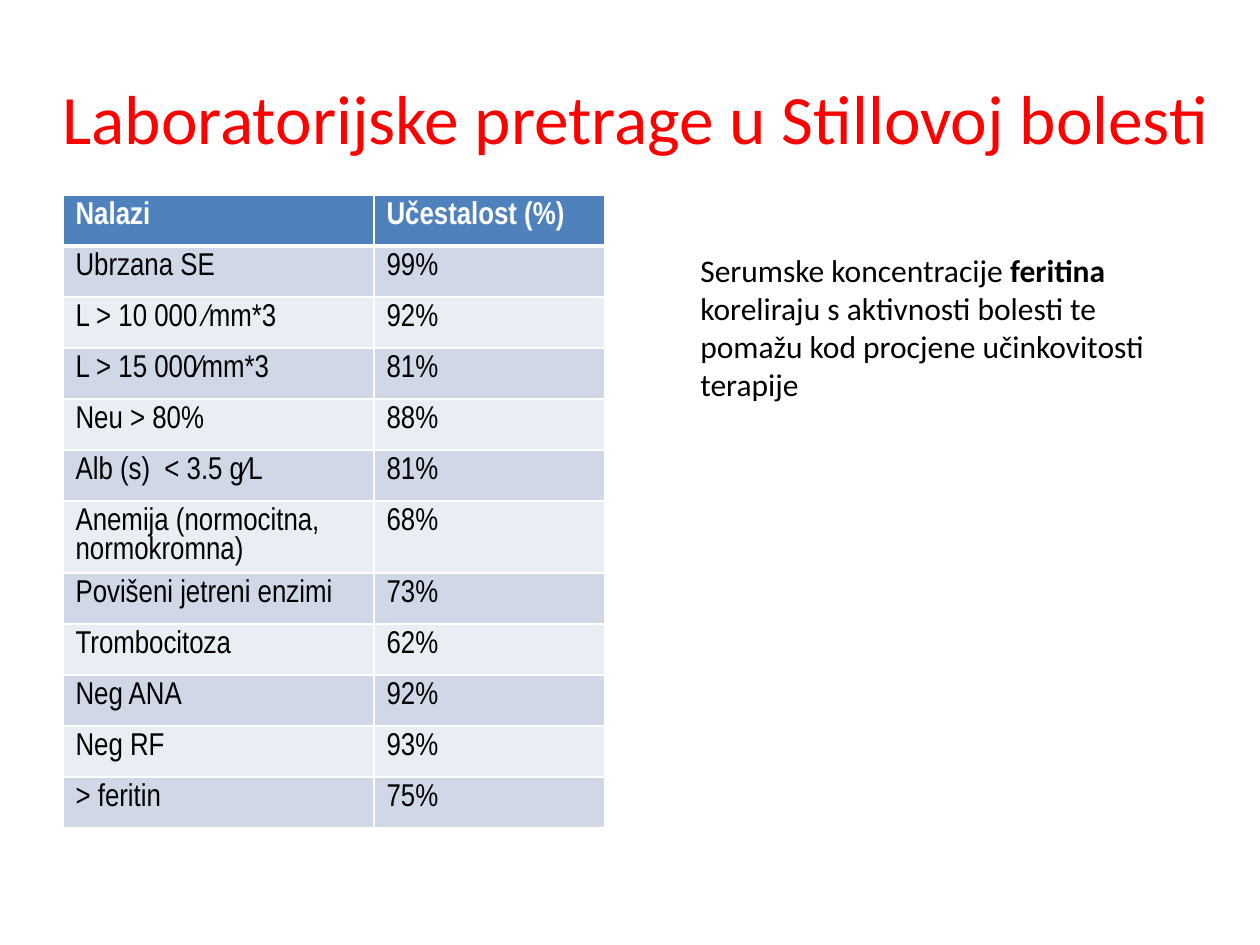
from dataclasses import dataclass

from lxml.etree import SubElement
from pptx import Presentation
from pptx.dml.color import RGBColor
from pptx.enum.text import MSO_ANCHOR, MSO_AUTO_SIZE, PP_ALIGN
from pptx.oxml.ns import qn
from pptx.util import Emu, Pt

PIXELS_PER_INCH = 126
EMU_PER_PIXEL = 914400 / PIXELS_PER_INCH


@dataclass(frozen=True)
class Theme:
    title_font: str = "Calibri"
    table_font: str = "Arial Narrow"
    title_size: float = 39.6
    body_size: float = 18
    title: str = "FF0000"
    text: str = "000000"
    white: str = "FFFFFF"
    header: str = "4F81BD"
    bands: tuple = ("D0D8E8", "E9EDF4")
    border: int = 1
    header_border: int = 3


THEME = Theme()

FINDINGS = [
    ("Nalazi", "Učestalost (%)"),
    ("Ubrzana SE", "99%"),
    ("L > 10 000 ⁄mm*3", "92%"),
    ("L > 15 000⁄mm*3", "81%"),
    ("Neu > 80%", "88%"),
    ("Alb (s)  < 3.5 g⁄L", "81%"),
    ("Anemija (normocitna, normokromna)", "68%"),
    ("Povišeni jetreni enzimi", "73%"),
    ("Trombocitoza", "62%"),
    ("Neg ANA", "92%"),
    ("Neg RF", "93%"),
    ("> feritin", "75%"),
]

FERRITIN_NOTE = [
    ("Serumske koncentracije ", False),
    ("feritina", True),
    (" koreliraju s aktivnosti bolesti te pomažu kod procjene učinkovitosti terapije", False),
]


def px(length):
    return Emu(round(length * EMU_PER_PIXEL))


def add_run(paragraph, text, font, size, color, bold=False):
    run = paragraph.add_run()
    run.text = text
    run.font.name = font
    run.font.size = Pt(size)
    run.font.bold = bold
    run.font.color.rgb = RGBColor.from_string(color)


def add_title(slide, box, text):
    title = slide.shapes.title
    title.left, title.top, title.width, title.height = map(px, box)
    frame = title.text_frame
    frame.auto_size = MSO_AUTO_SIZE.NONE
    frame.word_wrap = True
    frame.vertical_anchor = MSO_ANCHOR.MIDDLE
    paragraph = frame.paragraphs[0]
    paragraph.alignment = PP_ALIGN.CENTER
    add_run(paragraph, text, THEME.title_font, THEME.title_size, THEME.title)


def set_borders(cell, widths):
    properties = cell._tc.get_or_add_tcPr()
    for side, width in widths.items():
        line = SubElement(properties, qn(f"a:ln{side}"), w=str(Pt(width)))
        fill = SubElement(line, qn("a:solidFill"))
        SubElement(fill, qn("a:srgbClr"), val=THEME.white)


def add_findings_table(slide, box, rows, first_column_width):
    left, top, width, height = box
    frame = slide.shapes.add_table(len(rows), len(rows[0]), *map(px, box))
    table = frame.table
    table.columns[0].width = px(first_column_width)
    table.columns[1].width = px(width - first_column_width)
    for row_index, values in enumerate(rows):
        table.rows[row_index].height = px(height / len(rows))
        is_header = row_index == 0
        widths = dict.fromkeys("LRTB", THEME.border)
        if is_header:
            widths["B"] = THEME.header_border
        elif row_index == 1:
            widths["T"] = THEME.header_border
        background = THEME.header if is_header else THEME.bands[(row_index - 1) % 2]
        color = THEME.white if is_header else THEME.text
        for column_index, value in enumerate(values):
            cell = table.cell(row_index, column_index)
            set_borders(cell, widths)
            cell.fill.solid()
            cell.fill.fore_color.rgb = RGBColor.from_string(background)
            paragraph = cell.text_frame.paragraphs[0]
            add_run(paragraph, value, THEME.table_font, THEME.body_size, color, is_header)


def add_note(slide, box, runs):
    note = slide.shapes.add_textbox(*map(px, box))
    frame = note.text_frame
    frame.word_wrap = True
    frame.auto_size = MSO_AUTO_SIZE.SHAPE_TO_FIT_TEXT
    for text, bold in runs:
        add_run(frame.paragraphs[0], text, THEME.title_font, THEME.body_size, THEME.text, bold)


def main():
    presentation = Presentation()
    presentation.slide_width = px(1260)
    presentation.slide_height = px(945)
    slide = presentation.slides.add_slide(presentation.slide_layouts[5])
    add_title(slide, (25, 38, 1221, 158), "Laboratorijske pretrage u Stillovoj bolesti")
    add_findings_table(slide, (63, 195, 542, 612), FINDINGS, 311)
    add_note(slide, (688, 245, 509, 165), FERRITIN_NOTE)
    presentation.save("out.pptx")


if __name__ == "__main__":
    main()
